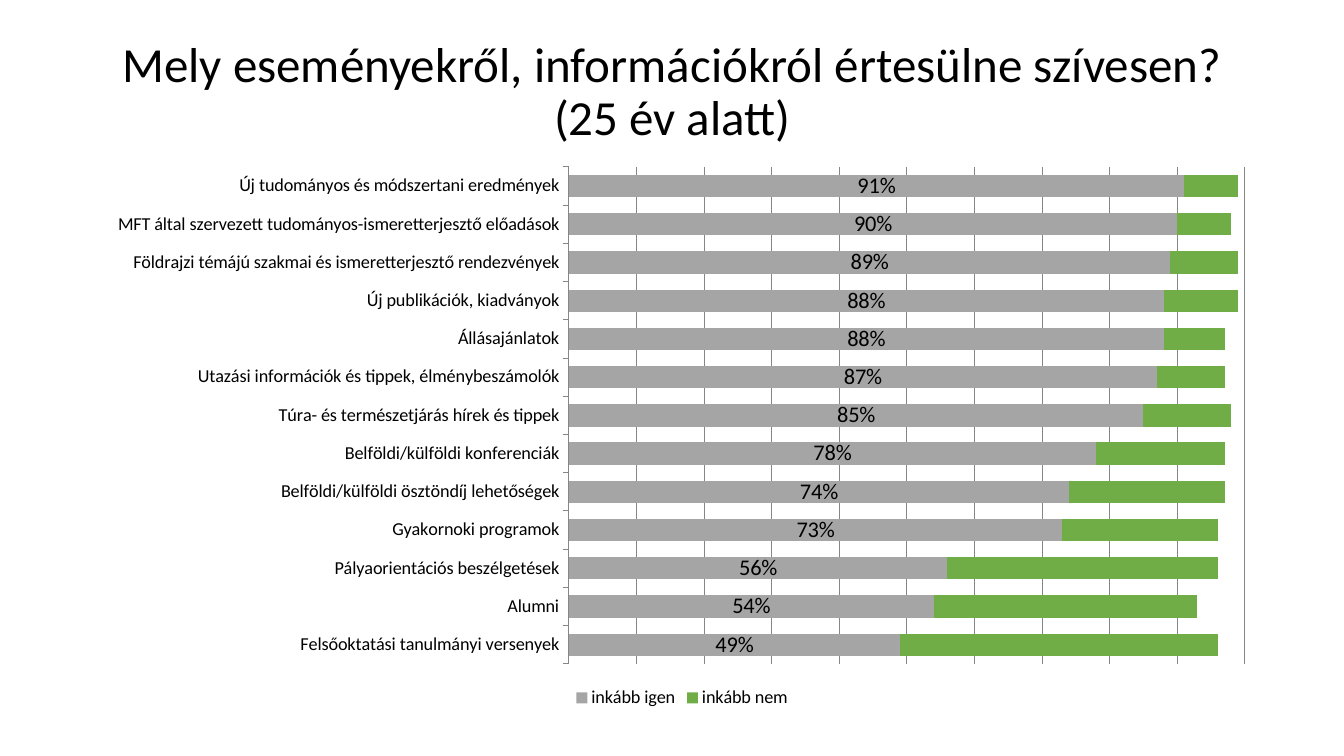
import pptx
import pptx.chart.data
import pptx.dml.color
import pptx.enum.chart
import pptx.enum.text
import pptx.oxml
import pptx.oxml.ns
import pptx.util
from dataclasses import dataclass

EMU_PER_PX = 914400 / 100.8
FONT = "Calibri"
BLACK = pptx.dml.color.RGBColor(0x00, 0x00, 0x00)
GRAY = pptx.dml.color.RGBColor(0xA5, 0xA5, 0xA5)
GREEN = pptx.dml.color.RGBColor(0x70, 0xAD, 0x47)
GRID = pptx.dml.color.RGBColor(0x86, 0x86, 0x86)


@dataclass(frozen=True)
class Box:
    left: int
    top: int
    width: int
    height: int

    def emu(self) -> list[int]:
        return [px(n) for n in (self.left, self.top, self.width, self.height)]


@dataclass(frozen=True)
class Topic:
    name: str
    rather_yes: float
    rather_no: float


def px(length: int) -> pptx.util.Emu:
    return pptx.util.Emu(round(length * EMU_PER_PX))


TITLE_BOX = Box(93, 20, 1159, 146)
CHART_BOX = Box(95, 157, 1174, 556)
PLOT_BOX = Box(569, 167, 676, 497)

# Listed from the bottom bar upwards
TOPICS = [
    Topic("Felsőoktatási tanulmányi versenyek", 0.49, 0.47),
    Topic("Alumni", 0.54, 0.39),
    Topic("Pályaorientációs beszélgetések", 0.56, 0.40),
    Topic("Gyakornoki programok", 0.73, 0.23),
    Topic("Belföldi/külföldi ösztöndíj lehetőségek", 0.74, 0.23),
    Topic("Belföldi/külföldi konferenciák", 0.78, 0.19),
    Topic("Túra- és természetjárás hírek és tippek", 0.85, 0.13),
    Topic("Utazási információk és tippek, élménybeszámolók", 0.87, 0.10),
    Topic("Állásajánlatok", 0.88, 0.09),
    Topic("Új publikációk, kiadványok", 0.88, 0.11),
    Topic("Földrajzi témájú szakmai és ismeretterjesztő rendezvények", 0.89, 0.10),
    Topic("MFT által szervezett tudományos-ismeretterjesztő előadások", 0.90, 0.08),
    Topic("Új tudományos és módszertani eredmények", 0.91, 0.08),
]


def style_font(font, size: int) -> None:
    font.name = FONT
    font.size = pptx.util.Pt(size)
    font.color.rgb = BLACK


def style_line(line) -> None:
    line.color.rgb = GRID
    line.width = pptx.util.Pt(0.75)


def place_plot(chart, plot: Box, frame: Box) -> None:
    """Fix the inner plot area as fractions of the chart frame."""
    fractions = {
        "x": (plot.left - frame.left) / frame.width,
        "y": (plot.top - frame.top) / frame.height,
        "w": plot.width / frame.width,
        "h": plot.height / frame.height,
    }
    settings = '<c:layoutTarget val="inner"/><c:xMode val="edge"/><c:yMode val="edge"/>'
    settings += "".join(f'<c:{key} val="{value:.4f}"/>' for key, value in fractions.items())
    layout = pptx.oxml.parse_xml(
        f'<c:layout {pptx.oxml.ns.nsdecls("c")}><c:manualLayout>{settings}</c:manualLayout></c:layout>'
    )
    plot_area = chart.element.find(".//" + pptx.oxml.ns.qn("c:plotArea"))
    for old_layout in plot_area.findall(pptx.oxml.ns.qn("c:layout")):
        plot_area.remove(old_layout)
    plot_area.insert(0, layout)


def add_title(slide, text: str) -> None:
    frame = slide.shapes.add_textbox(*TITLE_BOX.emu()).text_frame
    frame.word_wrap = True
    frame.vertical_anchor = pptx.enum.text.MSO_ANCHOR.MIDDLE
    frame.text = text
    heading = frame.paragraphs[0]
    heading.alignment = pptx.enum.text.PP_ALIGN.CENTER
    heading.line_spacing = 0.9
    style_font(heading.runs[0].font, 35)


def add_interest_chart(slide) -> None:
    answers = pptx.chart.data.CategoryChartData(number_format="0%")
    answers.categories = [topic.name for topic in TOPICS]
    answers.add_series("inkább igen", [topic.rather_yes for topic in TOPICS])
    answers.add_series("inkább nem", [topic.rather_no for topic in TOPICS])
    chart = slide.shapes.add_chart(
        pptx.enum.chart.XL_CHART_TYPE.BAR_STACKED, *CHART_BOX.emu(), answers
    ).chart
    chart.has_title = False
    style_font(chart.font, 10)
    place_plot(chart, PLOT_BOX, CHART_BOX)

    # Bars
    bars = chart.plots[0]
    bars.gap_width = 72
    bars.overlap = 100
    bars.vary_by_categories = False
    for series, color in zip(bars.series, (GRAY, GREEN)):
        series.format.fill.solid()
        series.format.fill.fore_color.rgb = color
    yes_labels = bars.series[0].data_labels
    yes_labels.show_value = True
    yes_labels.number_format = "0%"
    yes_labels.number_format_is_linked = False
    yes_labels.position = pptx.enum.chart.XL_LABEL_POSITION.CENTER
    style_font(yes_labels.font, 16)

    # Axes
    topic_axis = chart.category_axis
    topic_axis.major_tick_mark = pptx.enum.chart.XL_TICK_MARK.OUTSIDE
    style_font(topic_axis.tick_labels.font, 13)
    style_line(topic_axis.format.line)
    share_axis = chart.value_axis
    share_axis.minimum_scale = 0
    share_axis.maximum_scale = 1
    share_axis.major_unit = 0.1
    share_axis.has_major_gridlines = True
    style_line(share_axis.major_gridlines.format.line)
    share_axis.visible = False

    # Legend
    chart.has_legend = True
    chart.legend.position = pptx.enum.chart.XL_LEGEND_POSITION.BOTTOM
    chart.legend.include_in_layout = False
    style_font(chart.legend.font, 13)


def main() -> None:
    deck = pptx.Presentation()
    deck.slide_width = px(1344)
    deck.slide_height = px(756)
    slide = deck.slides.add_slide(deck.slide_layouts[6])
    add_interest_chart(slide)
    add_title(slide, "Mely eseményekről, információkról értesülne szívesen? (25 év alatt)")
    deck.save("out.pptx")


if __name__ == "__main__":
    main()
